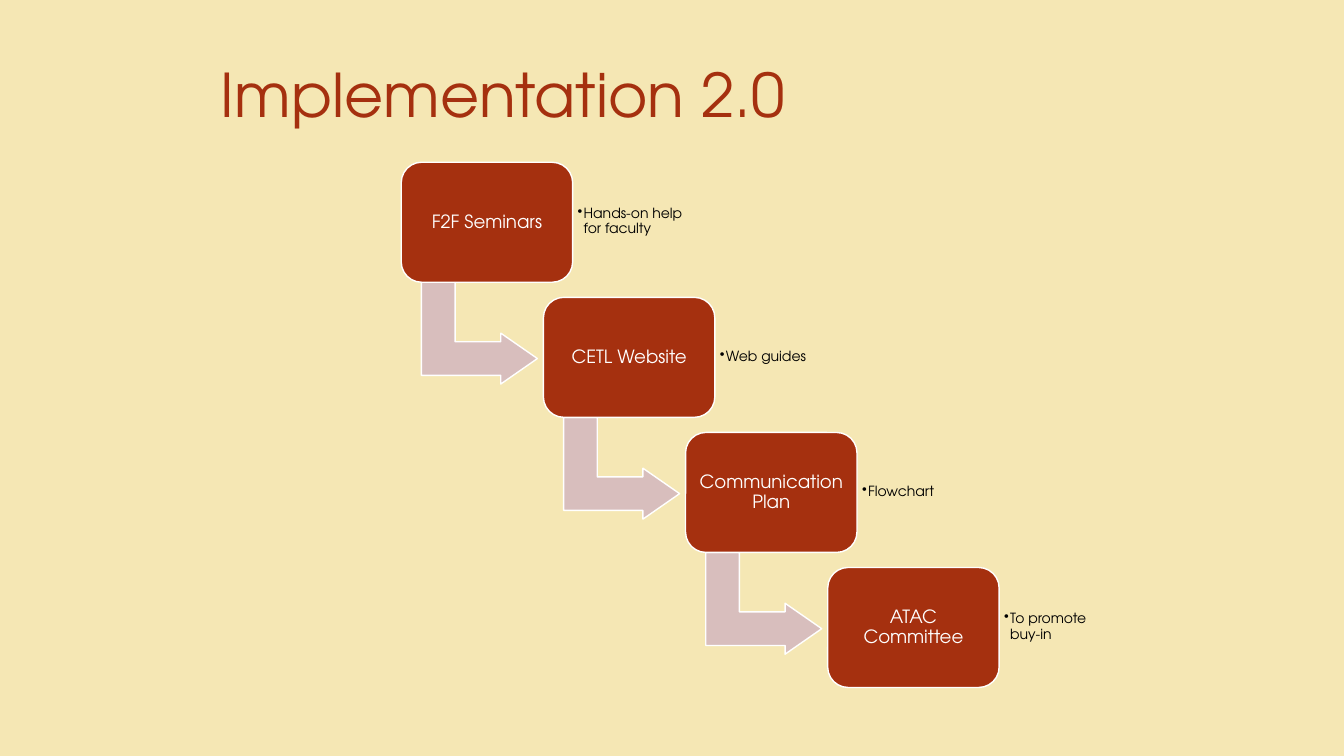
from lxml import etree
from pptx import Presentation
from pptx import util as u
from pptx.dml.color import RGBColor
from pptx.enum import shapes, text
from pptx.oxml.ns import qn

CREAM = RGBColor(0xF5, 0xE7, 0xB4)
RUST = RGBColor(0xA5, 0x30, 0x0F)
ROSE = RGBColor(0xD8, 0xBE, 0xBD)
WHITE = RGBColor(0xFF, 0xFF, 0xFF)
BLACK = RGBColor(0, 0, 0)
FONT = "TeX Gyre Adventor"

# Staircase grid, in inches: each step is one column right and one row down.
LEFT, TOP = 3.98, 1.61
COLUMN, ROW = 1.41, 1.34
BOX_W, BOX_H = 1.7, 1.19
NOTE_W, NOTE_H = 1.23, 0.96
ARROW_W, ARROW_H = 1.01, 1.15

STEPS = [
    ("F2F Seminars", "Hands-on help for faculty"),
    ("CETL Website", "Web guides"),
    ("Communication Plan", "Flowchart"),
    ("ATAC Committee", "To promote buy-in"),
]


def inches(*lengths):
    return [u.Inches(length) for length in lengths]


def write(sp, words, size, color, align=text.PP_ALIGN.LEFT, inset=0.05, spacing=0.9):
    tf = sp.text_frame
    tf.word_wrap = True
    tf.vertical_anchor = text.MSO_ANCHOR.MIDDLE
    tf.margin_left = tf.margin_right = tf.margin_top = tf.margin_bottom = u.Inches(inset)
    p = tf.paragraphs[0]
    p.alignment = align
    p.line_spacing = spacing
    r = p.add_run()
    r.text = words
    r.font.size = u.Pt(size)
    r.font.name = FONT
    r.font.color.rgb = color
    return p


def add_outlined(slide, kind, box, fill, adjustments):
    sp = slide.shapes.add_shape(kind, *inches(*box))
    sp.shadow.inherit = False
    sp.fill.solid()
    sp.fill.fore_color.rgb = fill
    sp.line.color.rgb = WHITE
    sp.line.width = u.Pt(1)
    for i, value in enumerate(adjustments):
        sp.adjustments[i] = value
    return sp


def add_title(slide, words):
    sp = slide.shapes.add_textbox(*inches(2.09, 0.3, 10.93, 1.25))
    write(sp, words, 43, RUST, inset=0.1, spacing=1)


def add_arrow(slide, x, y):
    """Lead from the box at x, y down and right to the next one."""
    sp = add_outlined(slide, shapes.MSO_SHAPE.BENT_UP_ARROW,
                      (x + 0.27, y + 1.12, ARROW_W, ARROW_H), ROSE, (0.33, 0.25, 0.36))
    sp.rotation = 90


def add_box(slide, x, y, words):
    sp = add_outlined(slide, shapes.MSO_SHAPE.ROUNDED_RECTANGLE,
                      (x, y, BOX_W, BOX_H), RUST, (0.17,))
    write(sp, words, 13, WHITE, text.PP_ALIGN.CENTER)


def add_note(slide, x, y, words):
    sp = slide.shapes.add_textbox(*inches(x + BOX_W, y + 0.11, NOTE_W, NOTE_H))
    p = write(sp, words, 10, BLACK)
    props = p._p.get_or_add_pPr()
    props.set("marL", str(u.Inches(0.06)))
    props.set("indent", str(-u.Inches(0.06)))
    etree.SubElement(props, qn("a:buChar"), char="•")


def main():
    prs = Presentation()
    prs.slide_width, prs.slide_height = inches(13.33, 7.5)
    slide = prs.slides.add_slide(prs.slide_layouts[6])
    slide.background.fill.solid()
    slide.background.fill.fore_color.rgb = CREAM

    add_title(slide, "Implementation 2.0")
    for i, (name, note) in enumerate(STEPS):
        x, y = LEFT + i * COLUMN, TOP + i * ROW
        if i < len(STEPS) - 1:
            add_arrow(slide, x, y)
        add_box(slide, x, y, name)
        add_note(slide, x, y, note)
    prs.save("out.pptx")


if __name__ == "__main__":
    main()
